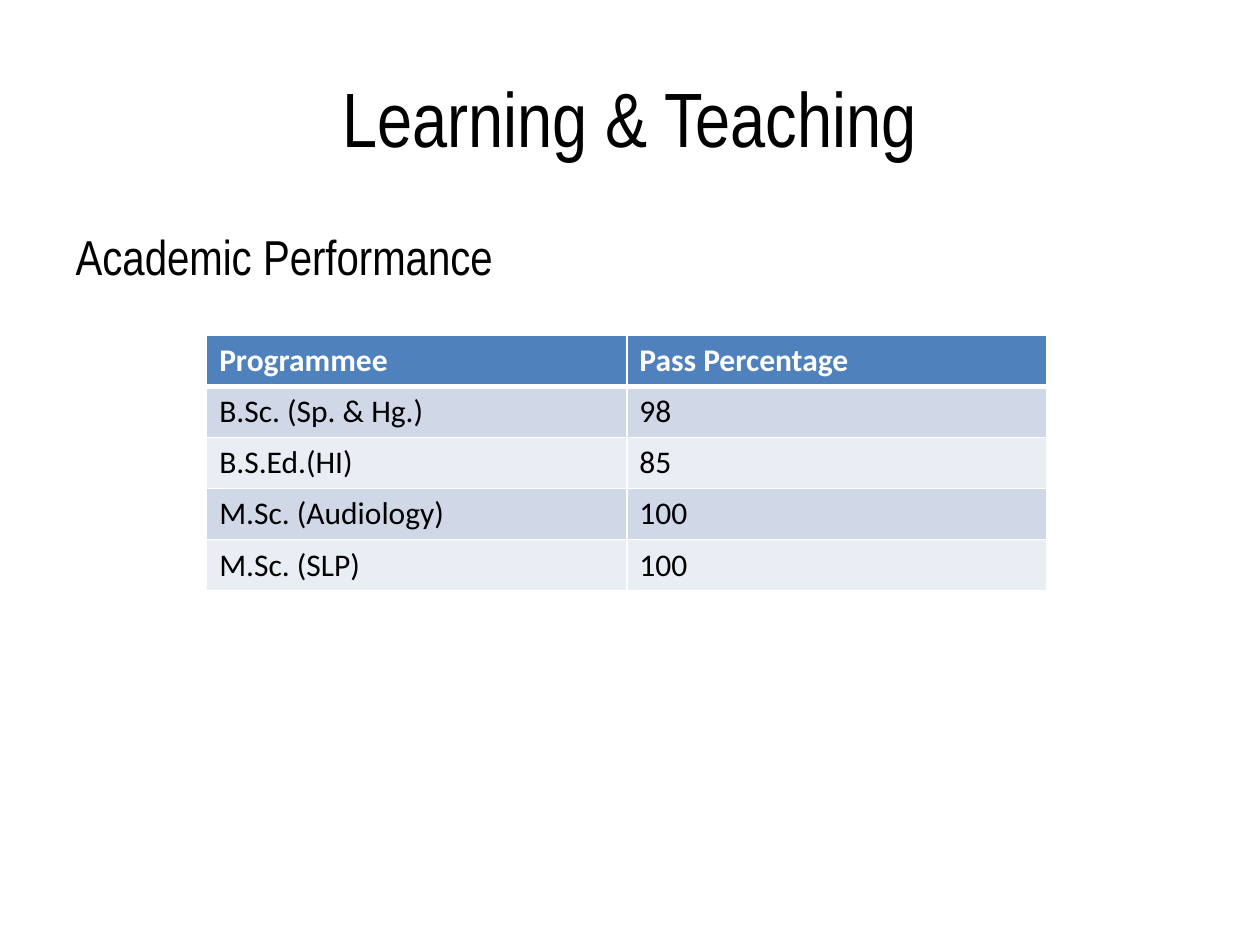
from lxml import etree
from pptx import Presentation
from pptx import util as u
from pptx.dml.color import RGBColor
from pptx.enum import text
from pptx.oxml import ns

BLACK = RGBColor(0x00, 0x00, 0x00)
WHITE = RGBColor(0xFF, 0xFF, 0xFF)
HEADER = RGBColor(0x4F, 0x81, 0xBD)
BANDS = RGBColor(0xD0, 0xD8, 0xE8), RGBColor(0xE9, 0xED, 0xF4)

TITLE_BOX = 0.5, 0.3, 9, 1.25
SUBTITLE_BOX = 0.5, 1.75, 4.03, 0.75
TABLE_BOX = 1.64, 2.66, 6.67, 2.03

RESULTS = [
    ("Programmee", "Pass Percentage"),
    ("B.Sc. (Sp. & Hg.)", "98"),
    ("B.S.Ed.(HI)", "85"),
    ("M.Sc. (Audiology)", "100"),
    ("M.Sc. (SLP)", "100"),
]


def style(font, color, **values):
    font.color.rgb = color
    for name, value in values.items():
        setattr(font, name, value)


def fill_placeholder(sp, box, wording, size, align, anchor):
    sp.left, sp.top, sp.width, sp.height = map(u.Inches, box)
    tf = sp.text_frame
    tf.word_wrap = True
    tf.vertical_anchor = anchor
    p = tf.paragraphs[0]
    p.alignment = align
    r = p.add_run()
    r.text = wording
    style(r.font, BLACK, name="Arial Narrow", size=u.Pt(size))
    return p


def add_border(cell, side, points):
    tc_pr = cell._tc.get_or_add_tcPr()
    line = etree.SubElement(tc_pr, ns.qn(f"a:ln{side}"), w=str(u.Pt(points)))
    fill = etree.SubElement(line, ns.qn("a:solidFill"))
    etree.SubElement(fill, ns.qn("a:srgbClr"), val=str(WHITE))


def add_results(s, box, data):
    """Banded table whose rows and columns share the box equally."""
    left, top, width, height = map(u.Inches, box)
    rows, cols = len(data), len(data[0])
    table = s.shapes.add_table(rows, cols, left, top, width, height).table
    for row in table.rows:
        row.height = height // rows
    for col in table.columns:
        col.width = width // cols
    for i, values in enumerate(data):
        is_header = i == 0
        for j, value in enumerate(values):
            cell = table.cell(i, j)
            for side in "LRTB":
                thick = (is_header and side == "B") or (i == 1 and side == "T")
                add_border(cell, side, 3 if thick else 1)
            cell.fill.solid()
            cell.fill.fore_color.rgb = HEADER if is_header else BANDS[(i - 1) % 2]
            r = cell.text_frame.paragraphs[0].add_run()
            r.text = value
            style(r.font, WHITE if is_header else BLACK,
                  name="Calibri", size=u.Pt(18), bold=is_header)


def main():
    prs = Presentation()
    prs.slide_width, prs.slide_height = u.Inches(10), u.Inches(7.5)
    s = prs.slides.add_slide(prs.slide_layouts[1])
    fill_placeholder(s.shapes.title, TITLE_BOX, "Learning & Teaching", 44,
                     text.PP_ALIGN.CENTER, text.MSO_ANCHOR.MIDDLE)
    p = fill_placeholder(s.placeholders[1], SUBTITLE_BOX, "Academic Performance", 28,
                         text.PP_ALIGN.LEFT, text.MSO_ANCHOR.TOP)
    etree.SubElement(p._p.get_or_add_pPr(), ns.qn("a:buNone"))
    add_results(s, TABLE_BOX, RESULTS)
    prs.save("out.pptx")


if __name__ == "__main__":
    main()
